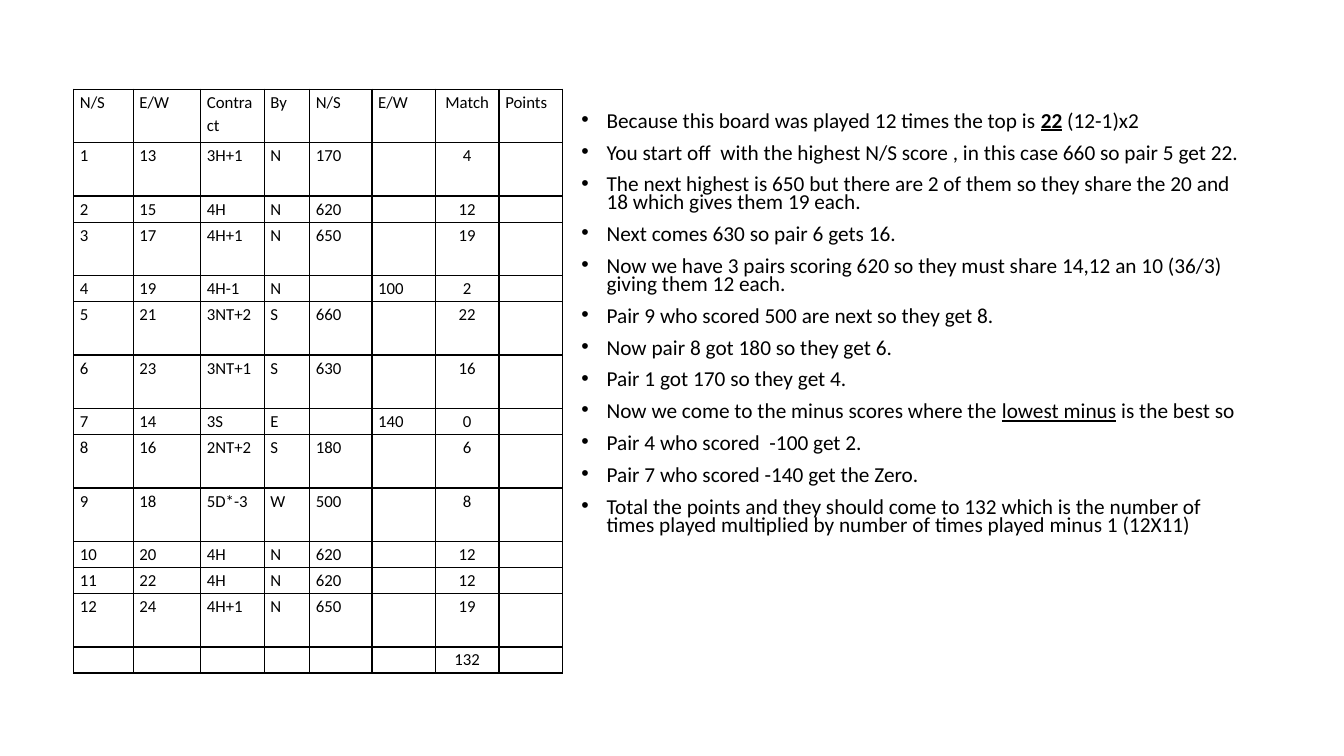
"""Build a slide explaining how match points are scored on one bridge board."""
import pptx
import pptx.dml.color
import pptx.enum.text
import pptx.oxml
import pptx.oxml.ns
import pptx.util

Pt = pptx.util.Pt
FONT = "Calibri"
BLACK = "000000"

HEADINGS = ("N/S", "E/W", "Contract", "By", "N/S", "E/W", "Match", "Points")
RESULTS = [
    ("1", "13", "3H+1", "N", "170", "", "4", ""),
    ("2", "15", "4H", "N", "620", "", "12", ""),
    ("3", "17", "4H+1", "N", "650", "", "19", ""),
    ("4", "19", "4H-1", "N", "", "100", "2", ""),
    ("5", "21", "3NT+2", "S", "660", "", "22", ""),
    ("6", "23", "3NT+1", "S", "630", "", "16", ""),
    ("7", "14", "3S", "E", "", "140", "0", ""),
    ("8", "16", "2NT+2", "S", "180", "", "6", ""),
    ("9", "18", "5D*-3", "W", "500", "", "8", ""),
    ("10", "20", "4H", "N", "620", "", "12", ""),
    ("11", "22", "4H", "N", "620", "", "12", ""),
    ("12", "24", "4H+1", "N", "650", "", "19", ""),
    ("", "", "", "", "", "", "132", ""),
]
MATCH_COLUMN = HEADINGS.index("Match")
COLUMN_WIDTHS = (42.5, 48.2, 45.4, 32.4, 44.6, 45.4, 45.4, 45.4)
TALL_ROWS = {0, 1, 3, 5, 6, 8, 9, 12}
TALL, SHORT = 38.2, 18.6
TABLE_LEFT, TABLE_TOP = 52.6, 63.7

PLAIN, UNDERLINED, STRONG = (False, False), (False, True), (True, True)
EXPLANATION = [
    [("Because this board was played 12 times the top is ", PLAIN), ("22", STRONG), (" (12-1)x2", PLAIN)],
    [("You start off  with the highest N/S score , in this case 660 so pair 5 get 22.", PLAIN)],
    [("The next highest is 650 but there are 2 of them so they share the 20 and 18 "
      "which gives them 19 each.", PLAIN)],
    [("Next comes 630 so pair 6 gets 16.", PLAIN)],
    [("Now we have 3 pairs scoring 620 so they must share 14,12 an 10 (36/3) "
      "giving them 12 each.", PLAIN)],
    [("Pair 9 who scored 500 are next so they get 8.", PLAIN)],
    [("Now pair 8 got 180 so they get 6.", PLAIN)],
    [("Pair 1 got 170 so they get 4.", PLAIN)],
    [("Now we come to the minus scores where the ", PLAIN), ("lowest minus", UNDERLINED),
     (" is the best so", PLAIN)],
    [("Pair 4 who scored  -100 get 2.", PLAIN)],
    [("Pair 7 who scored -140 get the Zero.", PLAIN)],
    [("Total the points and they should come to 132 which is the number of times played "
      "multiplied by number of times played minus 1 (12X11)", PLAIN)],
]


def color(hex_string):
    return pptx.dml.color.RGBColor.from_string(hex_string)


def format_run(run, size, bold=False, underline=False):
    run.font.name = FONT
    run.font.size = Pt(size)
    run.font.bold = bold
    run.font.underline = underline
    run.font.color.rgb = color(BLACK)


def add_borders(cell):
    properties = cell._tc.get_or_add_tcPr()
    for position, side in enumerate(("lnL", "lnR", "lnT", "lnB")):
        properties.insert(position, pptx.oxml.parse_xml(
            f'<a:{side} {pptx.oxml.ns.nsdecls("a")} w="{Pt(1)}"><a:solidFill>'
            f'<a:srgbClr val="{BLACK}"/></a:solidFill></a:{side}>'))


def fill_cell(cell, text, centred):
    cell.margin_left = cell.margin_right = Pt(4.5)
    cell.margin_top = cell.margin_bottom = 0
    cell.fill.background()
    add_borders(cell)
    cell.text_frame.text = text
    paragraph = cell.text_frame.paragraphs[0]
    paragraph.line_spacing = 1.15
    if centred:
        paragraph.alignment = pptx.enum.text.PP_ALIGN.CENTER
    for run in paragraph.runs:
        format_run(run, 12)
    if not text:
        paragraph._p.get_or_add_endParaRPr().set("sz", "1200")


def add_score_table(slide):
    rows = [HEADINGS, *RESULTS]
    heights = [TALL if index in TALL_ROWS else SHORT for index in range(len(rows))]
    table = slide.shapes.add_table(
        len(rows), len(HEADINGS), Pt(TABLE_LEFT), Pt(TABLE_TOP),
        Pt(sum(COLUMN_WIDTHS)), Pt(sum(heights))).table
    table.first_row = table.horz_banding = False
    for column, width in zip(table.columns, COLUMN_WIDTHS):
        column.width = Pt(width)
    for row_index, (values, height) in enumerate(zip(rows, heights)):
        table.rows[row_index].height = Pt(height)
        for column_index, value in enumerate(values):
            fill_cell(table.cell(row_index, column_index), value, column_index == MATCH_COLUMN)


def add_bullet(paragraph):
    properties = paragraph._p.get_or_add_pPr()
    properties.set("marL", str(Pt(18)))
    properties.set("indent", str(-Pt(18)))
    namespace = pptx.oxml.ns.nsdecls("a")
    properties.append(pptx.oxml.parse_xml(f'<a:buFont {namespace} typeface="Arial"/>'))
    properties.append(pptx.oxml.parse_xml(f'<a:buChar {namespace} char="•"/>'))


def add_explanation(slide):
    text_frame = slide.shapes.add_textbox(Pt(408.2), Pt(77.8), Pt(486), Pt(383.8)).text_frame
    text_frame.word_wrap = True
    for index, pieces in enumerate(EXPLANATION):
        paragraph = text_frame.add_paragraph() if index else text_frame.paragraphs[0]
        paragraph.line_spacing = 0.7
        paragraph.space_before = Pt(10)
        add_bullet(paragraph)
        for text, (bold, underline) in pieces:
            run = paragraph.add_run()
            run.text = text
            format_run(run, 15.2, bold, underline)


def main():
    presentation = pptx.Presentation()
    presentation.slide_width, presentation.slide_height = Pt(960), Pt(540)
    slide = presentation.slides.add_slide(presentation.slide_layouts[6])
    add_score_table(slide)
    add_explanation(slide)
    presentation.save("out.pptx")


if __name__ == "__main__":
    main()
